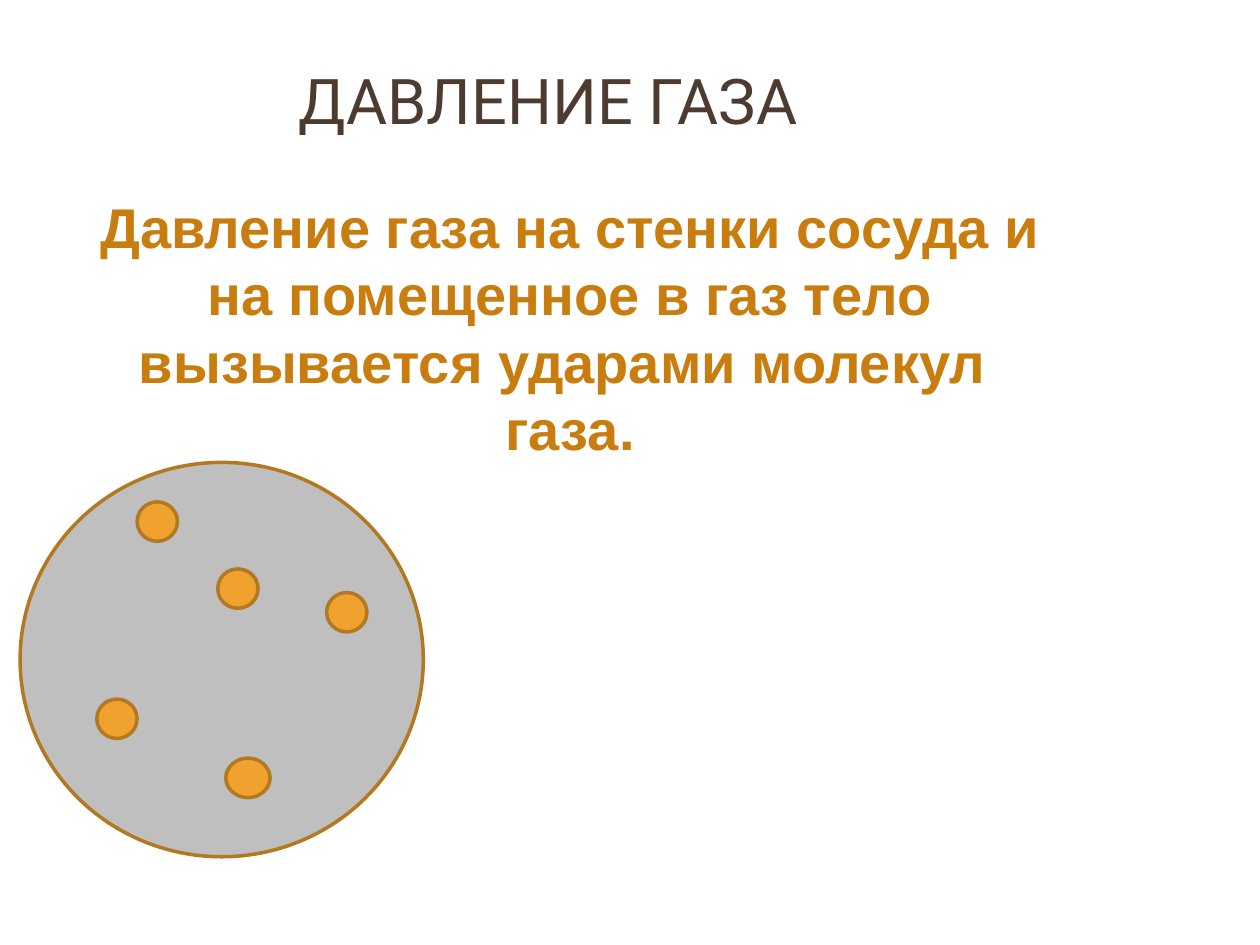
from dataclasses import dataclass

from pptx import Presentation
from pptx.dml.color import RGBColor
from pptx.enum.shapes import MSO_SHAPE
from pptx.enum.text import MSO_ANCHOR, PP_ALIGN
from pptx.util import Inches, Pt

OVAL = MSO_SHAPE.OVAL
CENTER = PP_ALIGN.CENTER
TOP, MIDDLE = MSO_ANCHOR.TOP, MSO_ANCHOR.MIDDLE


@dataclass(frozen=True)
class TextStyle:
    font: str
    size: int
    color: str
    bold: bool = False


@dataclass(frozen=True)
class Theme:
    title: TextStyle = TextStyle("Roboto", 36, "4E3B30")
    statement: TextStyle = TextStyle("Arial", 32, "C87D0E", True)
    vessel: str = "BFBFBF"
    molecule: str = "F0A22E"
    outline: str = "B27822"
    outline_width: int = 2


@dataclass(frozen=True)
class Box:
    """A region in inches."""
    left: float
    top: float
    width: float
    height: float

    def region(self, left, top, width, height):
        """Return a region given in shares of this one."""
        return Box(self.left + left * self.width, self.top + top * self.height,
                   width * self.width, height * self.height)

    def lengths(self):
        return [Inches(value) for value in (self.left, self.top, self.width, self.height)]


THEME = Theme()
SLIDE = Box(0, 0, 10, 7.5)
TITLE = Box(0.39, 0.16, 7.92, 1.25)
STATEMENT = Box(0.62, 1.48, 7.81, 2.26)
VESSEL = Box(0.16, 3.67, 3.2, 3.13)

# Left, top and width of each molecule, as shares of the vessel
MOLECULES = [
    (0.29, 0.10, 0.10),
    (0.76, 0.33, 0.10),
    (0.19, 0.60, 0.10),
    (0.49, 0.27, 0.10),
    (0.51, 0.75, 0.11),
]
MOLECULE_HEIGHT = 0.10


def add_text(slide, box, text, style, anchor):
    frame = slide.shapes.add_textbox(*box.lengths()).text_frame
    frame.word_wrap = True
    frame.vertical_anchor = anchor
    paragraph = frame.paragraphs[0]
    paragraph.alignment = CENTER
    run = paragraph.add_run()
    run.text = text
    run.font.name = style.font
    run.font.size = Pt(style.size)
    run.font.bold = style.bold
    run.font.color.rgb = RGBColor.from_string(style.color)


def add_ellipse(slide, box, fill):
    shape = slide.shapes.add_shape(OVAL, *box.lengths())
    shape.shadow.inherit = False
    shape.fill.solid()
    shape.fill.fore_color.rgb = RGBColor.from_string(fill)
    shape.line.color.rgb = RGBColor.from_string(THEME.outline)
    shape.line.width = Pt(THEME.outline_width)


def add_gas_vessel(slide, box):
    add_ellipse(slide, box, THEME.vessel)
    for left, top, width in MOLECULES:
        molecule = box.region(left, top, width, MOLECULE_HEIGHT)
        add_ellipse(slide, molecule, THEME.molecule)


def main():
    presentation = Presentation()
    presentation.slide_width = Inches(SLIDE.width)
    presentation.slide_height = Inches(SLIDE.height)
    slide = presentation.slides.add_slide(presentation.slide_layouts[6])

    # Heading and statement
    add_text(slide, TITLE, "ДАВЛЕНИЕ ГАЗА", THEME.title, MIDDLE)
    add_text(slide, STATEMENT,
             "Давление газа на стенки сосуда и на помещенное в газ тело "
             "вызывается ударами молекул  газа.", THEME.statement, TOP)

    # Vessel with gas molecules
    add_gas_vessel(slide, VESSEL)

    presentation.save("out.pptx")


if __name__ == "__main__":
    main()
